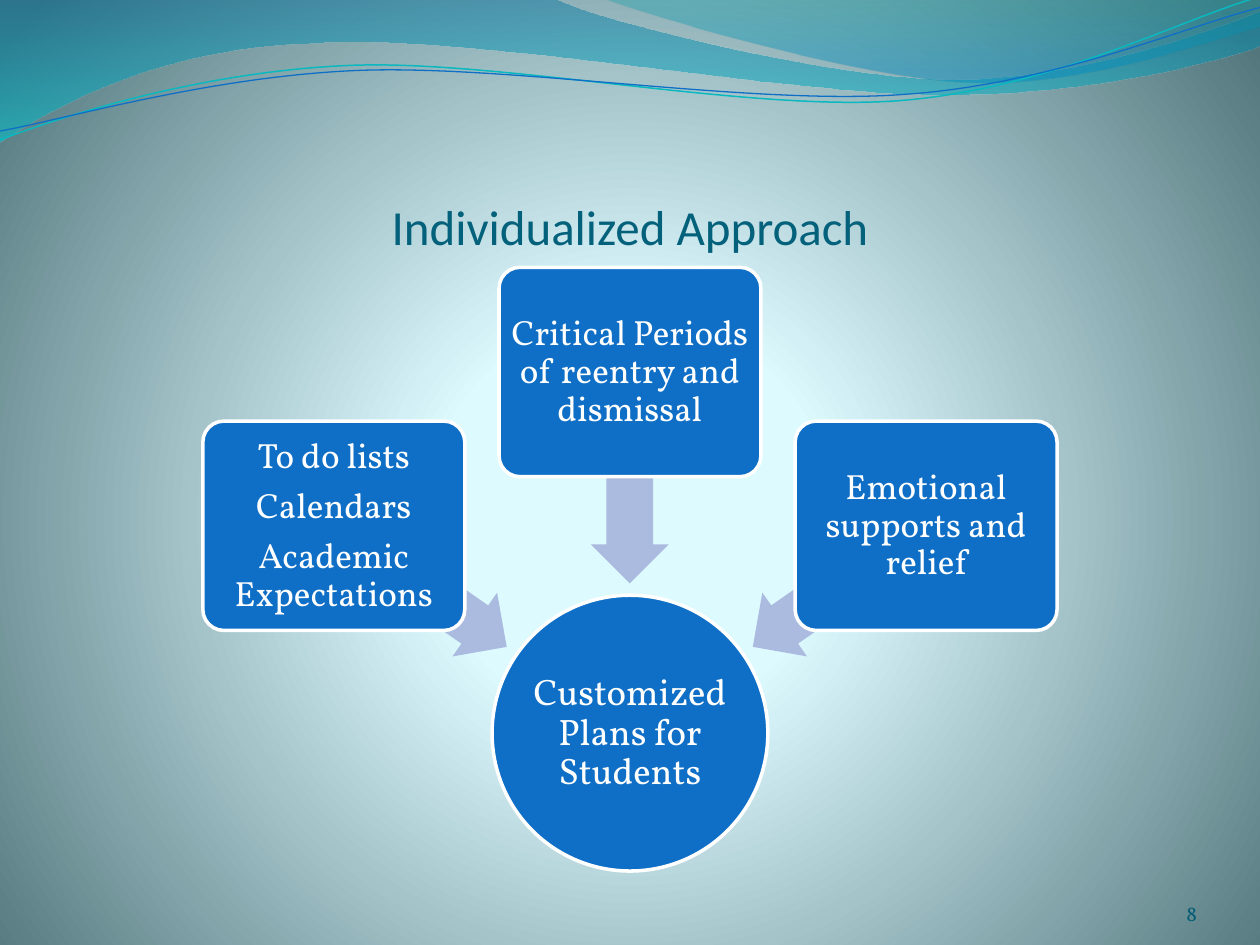
"""Build the slide on an individualized approach for students."""
from math import cos, radians, sin
from lxml.etree import SubElement as Sub
from pptx import Presentation
from pptx.dml.color import RGBColor as RGB
from pptx.enum.shapes import MSO_SHAPE as Kind
from pptx.enum.text import MSO_ANCHOR as Anchor, PP_ALIGN as Align
from pptx.oxml.ns import qn
from pptx.util import Cm, Pt

INCH = 2.54
WHITE = RGB(0xFF, 0xFF, 0xFF)
BLUE = RGB(0x0F, 0x6F, 0xC6)
CYAN = RGB(0x0A, 0xB8, 0xBF)
LILAC = RGB(0xAB, 0xBB, 0xDF)
TEAL = RGB(0x04, 0x61, 0x7B)
DEEP = RGB(0x04, 0x5D, 0x75)
PALE = RGB(0xDE, 0xFB, 0xFF)
ICE = RGB(0xDD, 0xFA, 0xFF)
SLATE = RGB(0x52, 0x76, 0x7C)
SEA = RGB(0x00, 0x74, 0xA1)
AQUA = RGB(0x00, 0xC6, 0xCF)
JADE = RGB(0x00, 0xA1, 0xA9)
SKY = RGB(0x00, 0x8B, 0xBF)


def blend(node, stops):
    """Fill the gradient in node with stops and return it."""
    grad = next(node.iter(qn("a:gradFill")))
    grad.clear()
    row = Sub(grad, qn("a:gsLst"))
    for pos, color, alpha in stops:
        stop = Sub(row, qn("a:gs"), pos=str(pos * 1000))
        tone = Sub(stop, qn("a:srgbClr"), val=str(color))
        if alpha < 100:
            Sub(tone, qn("a:alpha"), val=str(alpha * 1000))
    return grad


def write(shape, text, size, font, color, align, anchor, pad):
    """Set the text of a shape and format it."""
    frame = shape.text_frame
    frame.text = text
    frame.word_wrap = True
    frame.vertical_anchor = anchor
    frame.margin_left = frame.margin_right = Cm(pad)
    frame.margin_top = frame.margin_bottom = Cm(pad)
    for par in frame.paragraphs:
        par.alignment = align
        for run in par.runs:
            run.font.size = Pt(size)
            run.font.name = font
            run.font.color.rgb = color


deck = Presentation()
deck.slide_width, deck.slide_height = Cm(25.4), Cm(19.05)
slide = deck.slides.add_slide(deck.slide_layouts[5])
shapes = slide.shapes

slide.background.fill.gradient()
back = blend(slide.element, [(0, PALE, 100), (25, ICE, 100), (100, SLATE, 100)])
ring = Sub(back, qn("a:path"))
ring.set("path", "circle")
Sub(ring, qn("a:fillToRect"), l="10000", t="110000", r="10000", b="100000")

waves = [
    ((0, 0), [
        [(4.4, -0.01)],
        [(4.76, 0.17), (6.64, 0.63), (7.58, 0.63)],
        [(8.53, 0.63), (9.58, 0.26), (10, 0.09)],
        [(10.01, 0.36)],
        [(9.83, 0.44), (8.7, 0.76), (7.46, 0.75)],
        [(6.22, 0.75), (3.82, 0.28), (2.57, 0.34)],
        [(1.29, 0.36), (0.46, 0.83), (-0.01, 1.13)],
        [(0, 0)]],
     [(0, SEA, 45), (100, AQUA, 55)], None, 0, 0),
    ((4.79, -0.01), [
        [(5.09, 0.11), (6.82, 0.62), (7.69, 0.65)],
        [(8.56, 0.69), (9.61, 0.32), (10, 0.21)],
        [(10, 0)],
        [(4.79, -0.01)]],
     [(0, JADE, 30), (80, SKY, 45)], None, 0, 0),
    ((0, 1.11), [
        [(0.48, 0.93), (1.58, 0.57), (2.77, 0.52)],
        [(3.95, 0.47), (5.93, 0.89), (7.13, 0.8)],
        [(8.33, 0.71), (9.38, 0.15), (9.98, -0.02)]],
     None, CYAN, 0.85, 2.7),
    ((0, 1.04), [
        [(0.47, 0.96), (1.64, 0.61), (2.83, 0.56)],
        [(4.03, 0.51), (5.97, 0.84), (7.17, 0.75)],
        [(8.36, 0.67), (9.41, 0.21), (10, 0.06)]],
     None, BLUE, 0.75, 2.7),
]
for start, parts, stops, color, width, tilt in waves:
    turn, mid = radians(tilt), (5, 0.58)
    spots = []
    for x, y in [start] + sum(parts, []):
        dx, dy = x - mid[0], y - mid[1]
        x = mid[0] + dx * cos(turn) - dy * sin(turn)
        y = mid[1] + dx * sin(turn) + dy * cos(turn)
        spots.append((Cm(x * INCH), Cm(y * INCH)))
    pen = shapes.build_freeform(*spots[0])
    pen.add_line_segments(spots[1:], close=bool(stops))
    wave = pen.convert_to_shape()
    legs = iter(list(wave.element.iter(qn("a:lnTo"))))
    for part in parts:
        curve = next(legs)
        if len(part) == 3:
            curve.tag = qn("a:cubicBezTo")
            for leg in (next(legs), next(legs)):
                curve.append(leg[0])
                leg.getparent().remove(leg)
    wave.shadow.inherit = False
    wave.rotation = -tilt
    if stops:
        wave.fill.gradient()
        Sub(blend(wave.element, stops), qn("a:lin"), ang="5400000", scaled="1")
        wave.line.fill.background()
    else:
        wave.fill.background()
        wave.line.color.rgb = color
        wave.line.width = Pt(width)

title = shapes.title
title.left, title.top, title.width, title.height = Cm(1.27), Cm(1.96), Cm(22.86), Cm(3.18)
write(title, "Individualized Approach", 28, "Calibri", TEAL, Align.CENTER, Anchor.BOTTOM, 0)
title.text_frame.margin_top = Cm(0.13)
title.element.getparent().append(title.element)

page = shapes.add_textbox(Cm(22.02), Cm(17.65), Cm(2.11), Cm(1.02))
write(page, "8", 12, "Vollkorn", DEEP, Align.RIGHT, Anchor.BOTTOM, 0)

spot = Cm(9.92), Cm(12), Cm(5.56), Cm(5.56)
hub = shapes.add_shape(Kind.OVAL, *spot)
label = shapes.add_textbox(*spot)
nodes = [hub]
texts = [(label, "Customized Plans for Students", 21, 0.03)]
topics = [
    ("To do lists\nCalendars\nAcademic Expectations", 8.49, 11.03),
    ("Critical Periods of reentry and dismissal", 5.39, 8.84),
    ("Emotional supports and relief", 8.49, 11.03),
]
for i, (text, top, low) in enumerate(topics):
    arrow = shapes.add_shape(
        Kind.LEFT_ARROW, Cm(6.33 + 4.23 * i), Cm(low), Cm(4.27), Cm(1.57))
    arrow.adjustments[0] = 0.6
    arrow.rotation = 215 + 55 * i
    arrow.shadow.inherit = False
    arrow.fill.solid()
    arrow.fill.fore_color.rgb = LILAC
    arrow.line.fill.background()
    box = shapes.add_shape(
        Kind.ROUNDED_RECTANGLE, Cm(4.09 + 5.97 * i), Cm(top), Cm(5.28), Cm(4.22))
    box.adjustments[0] = 0.1
    nodes.append(box)
    texts.append((box, text, 20, 0.1))

for node in nodes:
    node.shadow.inherit = False
    node.fill.solid()
    node.fill.fore_color.rgb = BLUE
    node.line.color.rgb = WHITE
    node.line.width = Pt(2)

for shape, text, size, pad in texts:
    write(shape, text, size, "Vollkorn", WHITE, Align.CENTER, Anchor.MIDDLE, pad)
    for par in shape.text_frame.paragraphs:
        par.line_spacing = 0.9
        par.space_after = Pt(size * 0.35)

deck.save("out.pptx")
